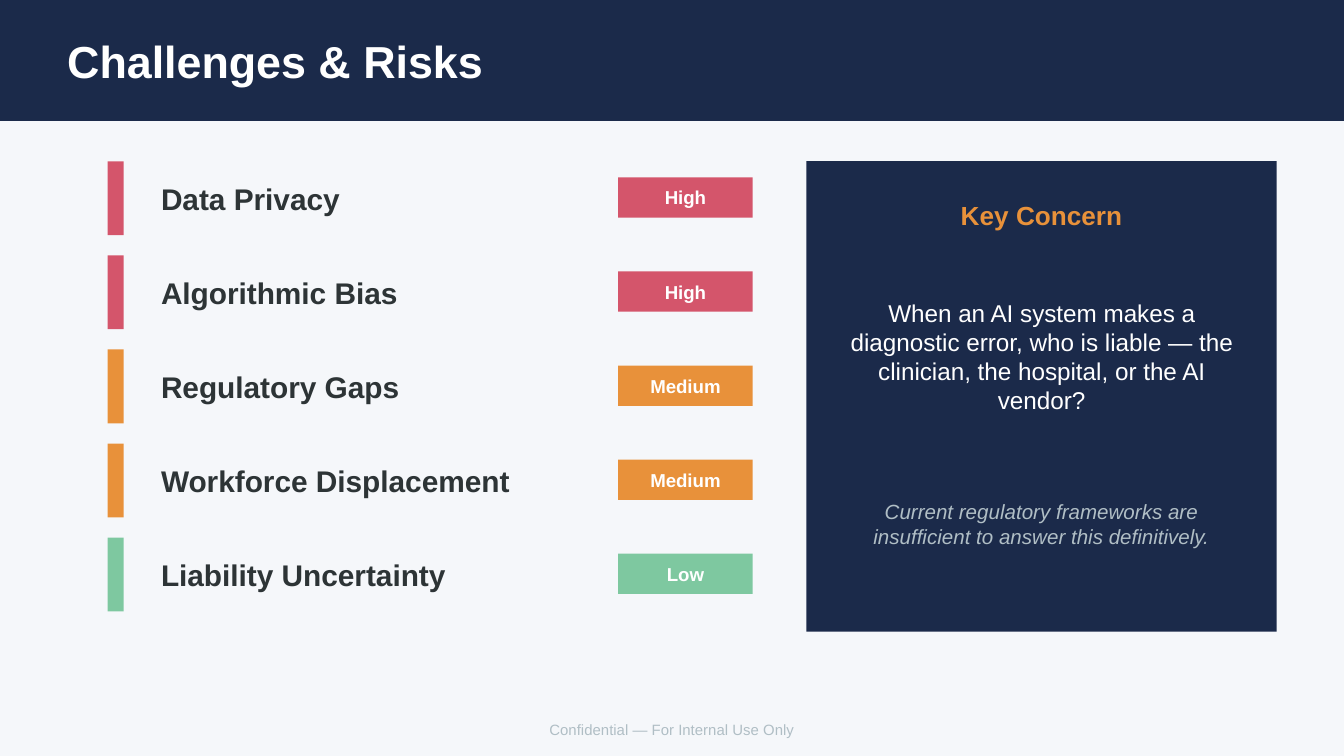
from pptx import Presentation
from pptx.dml.color import RGBColor
from pptx.enum.shapes import MSO_SHAPE
from pptx.enum.text import MSO_ANCHOR, PP_ALIGN
from pptx.util import Pt

EMU_PER_PX = 4572
COLORS = {
    "paper": "F5F7FA",
    "navy": "1B2A4A",
    "white": "FFFFFF",
    "ink": "2D3436",
    "muted": "B0BEC5",
    "orange": "E8913A",
    "High": "D4556B",
    "Medium": "E8913A",
    "Low": "7EC8A0",
}
RISKS = [
    ("Data Privacy", "High"),
    ("Algorithmic Bias", "High"),
    ("Regulatory Gaps", "Medium"),
    ("Workforce Displacement", "Medium"),
    ("Liability Uncertainty", "Low"),
]
ROW_TOP, ROW_PITCH, ROW_HEIGHT = 240, 140, 110


class RiskSlide:
    """Holds the style and the current page, and draws each kind of element."""

    def __init__(self, deck):
        self.page = deck.slides.add_slide(deck.slide_layouts[6])
        fill = self.page.background.fill
        fill.solid()
        fill.fore_color.rgb = self.color("paper")

    def color(self, name):
        return RGBColor.from_string(COLORS[name])

    def frame(self, *lengths):
        return [length * EMU_PER_PX for length in lengths]

    def block(self, left, top, width, height, color):
        shape = self.page.shapes.add_shape(
            MSO_SHAPE.RECTANGLE, *self.frame(left, top, width, height))
        shape.shadow.inherit = False
        shape.fill.solid()
        shape.fill.fore_color.rgb = self.color(color)
        shape.line.fill.background()

    def text(self, left, top, width, height, words, size, color,
             align=PP_ALIGN.CENTER, inset=True, **style):
        box = self.page.shapes.add_textbox(
            *self.frame(left, top, width, height)).text_frame
        layout = {"word_wrap": True, "vertical_anchor": MSO_ANCHOR.MIDDLE}
        if not inset:
            layout.update(margin_left=0, margin_right=0, margin_top=0, margin_bottom=0)
        for name, value in layout.items():
            setattr(box, name, value)
        para = box.paragraphs[0]
        para.alignment = align
        span = para.add_run()
        span.text = words
        for name, value in {"name": "Arial", "size": Pt(size), **style}.items():
            setattr(span.font, name, value)
        span.font.color.rgb = self.color(color)

    def risk(self, top, label, level):
        self.block(160, top, 24, ROW_HEIGHT, level)
        self.text(220, top, 700, ROW_HEIGHT, label, 16, "ink",
                  align=PP_ALIGN.LEFT, bold=True)
        badge = (920, top + 24, 200, 60)
        self.block(*badge, level)
        self.text(*badge, level, 10, "white", bold=True)


def main():
    deck = Presentation()
    deck.slide_width = 2000 * EMU_PER_PX
    deck.slide_height = 1125 * EMU_PER_PX
    slide = RiskSlide(deck)

    slide.block(0, 0, 2000, 180, "navy")
    slide.text(100, 40, 1800, 100, "Challenges & Risks", 24, "white",
               align=PP_ALIGN.LEFT, inset=False, bold=True)

    for row, (label, level) in enumerate(RISKS):
        slide.risk(ROW_TOP + row * ROW_PITCH, label, level)

    slide.block(1200, 240, 700, 700, "navy")
    slide.text(1200, 280, 700, 80, "Key Concern", 14, "orange", bold=True)
    slide.text(1240, 380, 620, 300,
               "When an AI system makes a diagnostic error, who is liable — "
               "the clinician, the hospital, or the AI vendor?", 13, "white")
    slide.text(1240, 700, 620, 160,
               "Current regulatory frameworks are insufficient to answer "
               "this definitively.", 11, "muted", italic=True)
    slide.text(100, 1060, 1800, 50, "Confidential — For Internal Use Only", 8, "muted")

    deck.save("out.pptx")


if __name__ == "__main__":
    main()
